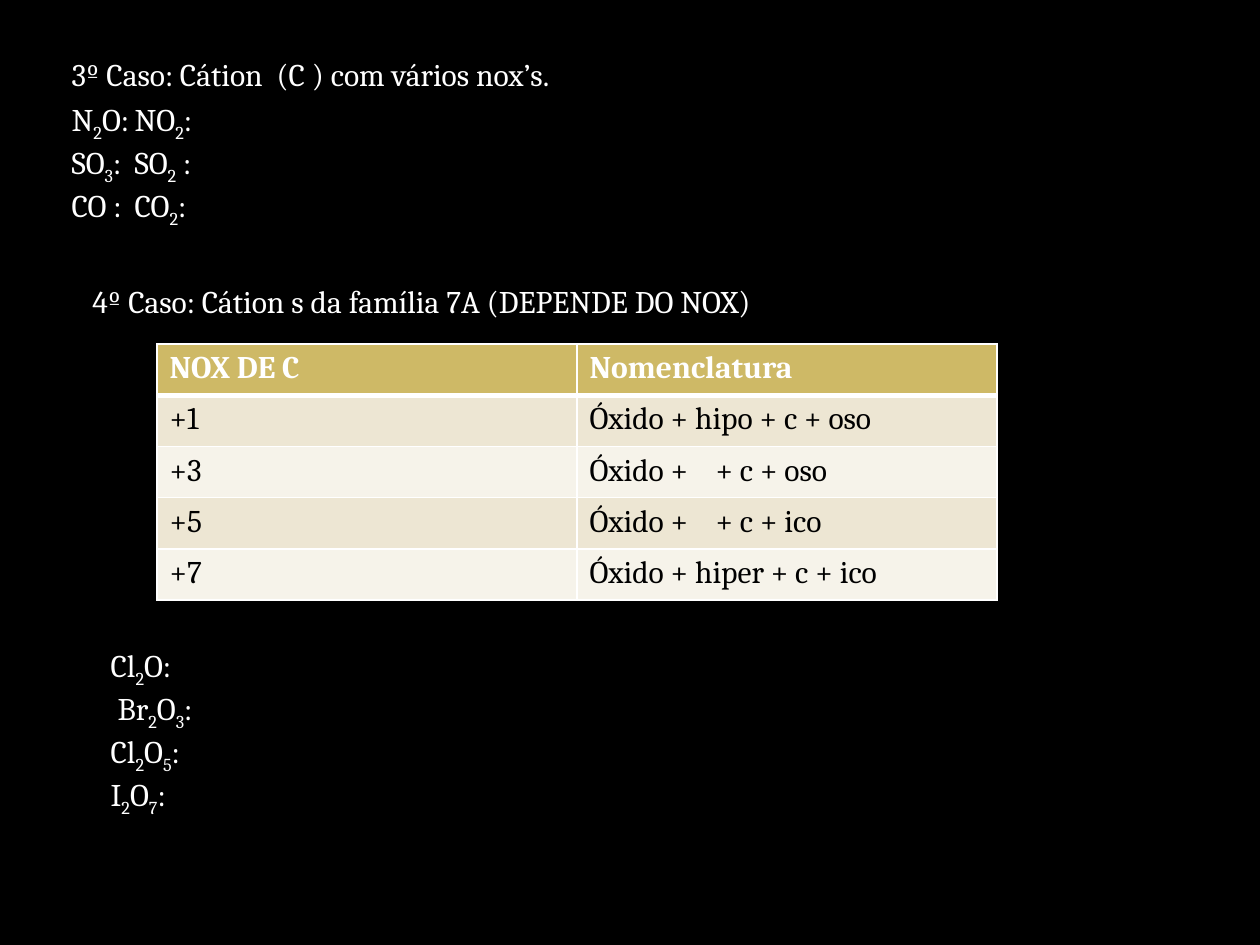
"""Build the slide on naming oxides whose cation has several oxidation numbers."""
from dataclasses import dataclass

from lxml import etree
from pptx import Presentation
from pptx import util as u
from pptx.dml.color import RGBColor
from pptx.enum import text
from pptx.oxml.ns import qn


@dataclass(frozen=True)
class Theme:
    """Colours, font and type size of the slide."""
    background: str = "000000"
    light: str = "FFFFFF"
    dark: str = "000000"
    header: str = "CEB966"
    bands: tuple = ("EDE6D3", "F6F3EA")
    font: str = "Cambria"
    size: int = 18


THEME = Theme()
FRAME_FORMAT = {
    "word_wrap": True,
    "vertical_anchor": text.MSO_ANCHOR.TOP,
    "auto_size": text.MSO_AUTO_SIZE.SHAPE_TO_FIT_TEXT,
}
PARAGRAPH_FORMAT = {
    "alignment": text.PP_ALIGN.LEFT,
    "space_before": u.Pt(0),
    "space_after": u.Pt(0),
    "line_spacing": 1.0,
}
CASE_3 = "3º Caso: Cátion  (C ) com vários nox’s."
CASE_4 = "4º Caso: Cátion s da família 7A (DEPENDE DO NOX)"
OXIDE_PAIRS = ["N_2O:\tNO_2:", "SO_3:\tSO_2 :", "CO :\tCO_2:"]
HALOGEN_OXIDES = ["Cl_2O:", " Br_2O_3:", "Cl_2O_5:", "I_2O_7:"]
NAMING = [
    ("NOX DE C", "Nomenclatura"),
    ("+1", "Óxido + hipo + c + oso"),
    ("+3", "Óxido +\t+ c + oso"),
    ("+5", "Óxido +\t+ c + ico"),
    ("+7", "Óxido + hiper + c + ico"),
]


def px(length):
    """Turn pixels at 126 to the inch into EMU."""
    return u.Emu(round(length * 914400 / 126))


def set_values(target, values):
    """Set attributes of an object from a dict."""
    for name, value in values.items():
        setattr(target, name, value)


def add_run(paragraph, words, color, bold, baseline=0):
    """Add one formatted run, lowered when the baseline is negative."""
    run = paragraph.add_run()
    run.text = words
    set_values(run.font, {"name": THEME.font, "size": u.Pt(THEME.size), "bold": bold})
    run.font.color.rgb = RGBColor.from_string(color)
    if baseline:
        run.font.language_id = None
        run._r.get_or_add_rPr().set("baseline", str(baseline))


def write_lines(frame, lines, color, bold=False, tab=None):
    """Write one paragraph a line, with the digit after each _ as a subscript."""
    for index, line in enumerate(lines):
        paragraph = frame.paragraphs[0] if index == 0 else frame.add_paragraph()
        set_values(paragraph, PARAGRAPH_FORMAT)
        properties = paragraph._p.get_or_add_pPr()
        properties.set("marL", "0")
        properties.set("indent", "0")
        etree.SubElement(properties, qn("a:buNone"))
        if tab:
            stops = etree.SubElement(properties, qn("a:tabLst"))
            etree.SubElement(stops, qn("a:tab"), pos=str(px(tab)), algn="l")
        first, *rest = line.split("_")
        add_run(paragraph, first, color, bold)
        for part in rest:
            add_run(paragraph, part[0], color, bold, -25000)
            add_run(paragraph, part[1:], color, bold)


def fill_text(shape, box, lines, tab=None):
    """Place a text shape and write its lines."""
    set_values(shape, dict(zip(("left", "top", "width", "height"), map(px, box))))
    set_values(shape.text_frame, FRAME_FORMAT)
    write_lines(shape.text_frame, lines, THEME.light, tab=tab)


def set_borders(cell, widths):
    """Draw the cell borders, given as points by side."""
    properties = cell._tc.get_or_add_tcPr()
    for side, width in widths.items():
        line = etree.SubElement(properties, qn(f"a:ln{side}"), w=str(u.Pt(width)))
        solid = etree.SubElement(line, qn("a:solidFill"))
        etree.SubElement(solid, qn("a:srgbClr"), val=THEME.light)


def add_naming_table(slide, box, rows):
    """Add the table of names with a header and banded rows."""
    table = slide.shapes.add_table(len(rows), len(rows[0]), *map(px, box)).table
    for row_index, row in enumerate(rows):
        is_header = row_index == 0
        fill = THEME.header if is_header else THEME.bands[(row_index - 1) % 2]
        color = THEME.light if is_header else THEME.dark
        widths = {"L": 1, "R": 1, "T": 3 if row_index == 1 else 1, "B": 3 if is_header else 1}
        for column_index, words in enumerate(row):
            cell = table.cell(row_index, column_index)
            set_borders(cell, widths)
            cell.fill.solid()
            cell.fill.fore_color.rgb = RGBColor.from_string(fill)
            write_lines(cell.text_frame, [words], color, is_header, 168)


def main():
    """Build and save the slide."""
    presentation = Presentation()
    set_values(presentation, {"slide_width": px(1260), "slide_height": px(945)})
    slide = presentation.slides.add_slide(presentation.slide_layouts[3])
    slide.background.fill.solid()
    slide.background.fill.fore_color.rgb = RGBColor.from_string(THEME.background)
    title, pairs, halogens = list(slide.placeholders)[:3]
    fill_text(title, (59, 49, 965, 50), [CASE_3])
    fill_text(pairs, (59, 94, 965, 127), OXIDE_PAIRS, tab=361)
    fill_text(slide.shapes.add_textbox(0, 0, 0, 0), (80, 276, 965, 50), [CASE_4])
    add_naming_table(slide, (157, 344, 840, 256), NAMING)
    fill_text(halogens, (98, 640, 965, 204), HALOGEN_OXIDES)
    presentation.save("out.pptx")


if __name__ == "__main__":
    main()
